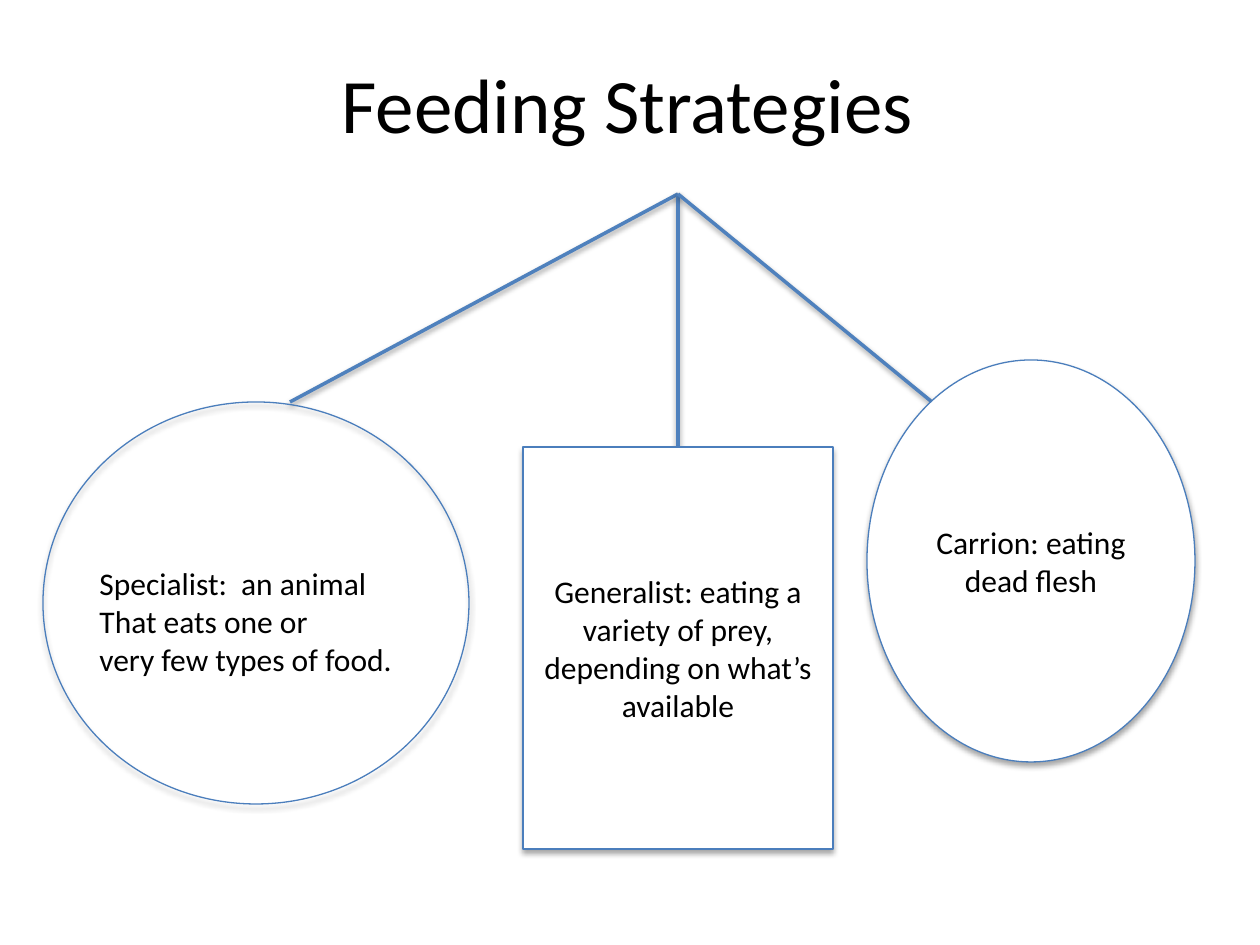
from lxml import etree
from pptx import Presentation
from pptx.dml.color import RGBColor
from pptx.enum.shapes import MSO_CONNECTOR, MSO_SHAPE
from pptx.enum.text import MSO_ANCHOR, MSO_AUTO_SIZE, PP_ALIGN
from pptx.oxml.ns import qn
from pptx.util import Pt

OVAL, RECT = MSO_SHAPE.OVAL, MSO_SHAPE.RECTANGLE
STRAIGHT = MSO_CONNECTOR.STRAIGHT
CENTER, LEFT = PP_ALIGN.CENTER, PP_ALIGN.LEFT
MIDDLE, TOP = MSO_ANCHOR.MIDDLE, MSO_ANCHOR.TOP
PX = 914400 / 126

COLORS = {"text": "000000", "paper": "FFFFFF", "branch": "4F81BD", "outline": "4B7EBC"}
TITLE = ("Feeding Strategies", (165, 11, 925, 183))
HUB = (678, 194)
BRANCH_ENDS = [(290, 402), (678, 447), (932, 402)]
STRATEGIES = [
    (OVAL, (43, 402, 426, 402), None, []),
    (RECT, (523, 447, 310, 402), "paper",
     ["Generalist: eating a variety of prey, depending on what’s available"]),
    (OVAL, (867, 360, 328, 402), "paper", ["Carrion: eating dead flesh"]),
]
SPECIALIST = ["Specialist:  an animal", "That eats one or", "very few types of food."]
SPECIALIST_BOX = (87, 558, 321, 127)


def px(*values):
    return [round(v * PX) for v in values]


def rgb(name):
    return RGBColor.from_string(COLORS[name])


def set_text(tf, lines, size, align, anchor, wrap=True):
    for name, value in {"word_wrap": wrap, "vertical_anchor": anchor}.items():
        setattr(tf, name, value)
    for i, line in enumerate(lines):
        p = tf.add_paragraph() if i else tf.paragraphs[0]
        p.alignment = align
        r = p.add_run()
        r.text = line
        for name, value in {"name": "Calibri", "size": Pt(size)}.items():
            setattr(r.font, name, value)
        r.font.color.rgb = rgb("text")


def outline(shape, color, width, distance, alpha):
    shape.line.color.rgb = rgb(color)
    shape.line.width = Pt(width)
    effects = etree.SubElement(shape._element.spPr, qn("a:effectLst"))
    shadow = etree.SubElement(effects, qn("a:outerShdw"), blurRad=str(Pt(3.1)),
                              dist=str(Pt(distance)), dir="5400000", rotWithShape="0")
    tint = etree.SubElement(shadow, qn("a:srgbClr"), val=COLORS["text"])
    etree.SubElement(tint, qn("a:alpha"), val=str(alpha * 1000))


def main():
    prs = Presentation()
    prs.slide_width, prs.slide_height = px(1260, 945)
    s = prs.slides.add_slide(prs.slide_layouts[5])

    title, box = TITLE
    sp = s.shapes.title
    sp.left, sp.top, sp.width, sp.height = px(*box)
    set_text(sp.text_frame, [title], 44, CENTER, MIDDLE)

    for end in BRANCH_ENDS:
        branch = s.shapes.add_connector(STRAIGHT, *px(*HUB, *end))
        outline(branch, "branch", 2, 1.6, 38)

    for kind, box, fill, lines in STRATEGIES:
        sp = s.shapes.add_shape(kind, *px(*box))
        if fill:
            sp.fill.solid()
            sp.fill.fore_color.rgb = rgb(fill)
        else:
            sp.fill.background()
        outline(sp, "outline", 0.75, 1.8, 35)
        set_text(sp.text_frame, lines, 18, CENTER, MIDDLE)

    tf = s.shapes.add_textbox(*px(*SPECIALIST_BOX)).text_frame
    set_text(tf, SPECIALIST, 18, LEFT, TOP, wrap=False)
    tf.auto_size = MSO_AUTO_SIZE.SHAPE_TO_FIT_TEXT

    prs.save("out.pptx")


if __name__ == "__main__":
    main()
